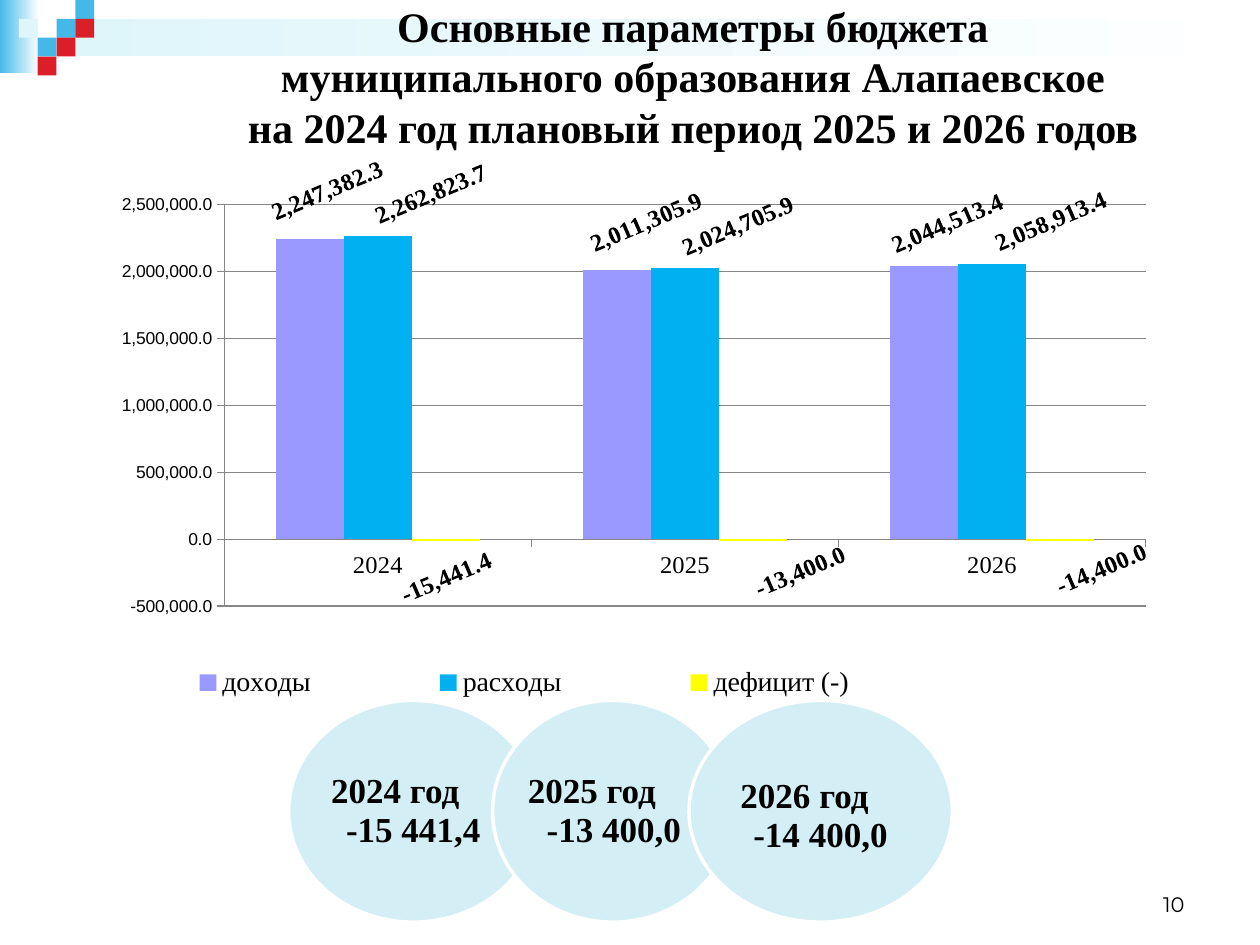
from lxml.etree import SubElement
from pptx import Presentation
from pptx.chart.data import CategoryChartData
from pptx.dml.color import RGBColor
from pptx.enum.chart import XL_CHART_TYPE, XL_LEGEND_POSITION, XL_TICK_MARK
from pptx.enum.shapes import MSO_SHAPE
from pptx.enum.text import MSO_ANCHOR, PP_ALIGN
from pptx.oxml import parse_xml
from pptx.oxml.ns import nsdecls, qn
from pptx.util import Cm, Pt

SERIF = "Times New Roman"
TITLE = ["Основные параметры бюджета",
         "муниципального образования Алапаевское",
         "на 2024 год плановый период 2025 и 2026 годов"]
YEARS = ["2024", "2025", "2026"]
SERIES = [
    ("доходы", "9999FF", (2247382.3, 2011305.9, 2044513.4),
     [(0.015, -0.015), (0.025, -0.015), (0.02, -0.005)]),
    ("расходы", "00B0F0", (2262823.7, 2024705.9, 2058913.4),
     [(0.045, -0.005), (0.045, -0.005), (0.05, -0.005)]),
    ("дефицит (-)", "FFFF00", (-15441.4, -13400, -14400),
     [(0, 0), (0.04, -0.01), (0.035, -0.015)]),
]
OVALS = [
    ("2024 год", "-15 441,4", 5.82, 5.03, 0.12, 0.3, 0),
    ("2025 год", "-13 400,0", 9.93, 4.85, 0, 0.38, 0),
    ("2026 год", "-14 400,0", 13.89, 5.31, 0.26, 0.26, 0.2),
]
BANDS = [(0, 0, 0.79, 1.47, "44B9E8"), (1.14, 0.38, 24.26, 0.76, "DEF5FA")]
CELL = 0.38
TILES = [(3, 1, "44B9E8"), (4, 0, "44B9E8"), (4, 1, "DA1F28"), (2, 2, "44B9E8"),
         (1, 1, "DEF5FA"), (3, 2, "DA1F28"), (2, 3, "DA1F28")]
LEADER = (
    f'<c:extLst {nsdecls("c")}><c:ext uri="{{CE6537A1-D6FC-4f65-9D91-7224C49458BB}}" '
    'xmlns:c15="http://schemas.microsoft.com/office/drawing/2012/chart">'
    '<c15:showLeaderLines val="0"/></c:ext></c:extLst>')


def color(code):
    return RGBColor.from_string(code)


def style(font, size, name=SERIF, bold=False, tint="000000"):
    font.size, font.name, font.bold = Pt(size), name, bold
    font.color.rgb = color(tint)


def write(frame, lines, size, align=PP_ALIGN.CENTER, anchor=MSO_ANCHOR.MIDDLE,
          name=SERIF, bold=True, space=1.0, pad=(0, 0, 0, 0)):
    frame.word_wrap = True
    frame.vertical_anchor = anchor
    (frame.margin_left, frame.margin_top,
     frame.margin_right, frame.margin_bottom) = map(Cm, pad)
    for i, line in enumerate(lines):
        para = frame.paragraphs[0] if i == 0 else frame.add_paragraph()
        para.alignment, para.line_spacing = align, space
        run = para.add_run()
        run.text = line
        style(run.font, size, name, bold)


def shape(slide, kind, box, tint, fade=False):
    item = slide.shapes.add_shape(kind, *map(Cm, box))
    item.shadow.inherit = False
    item.line.fill.background()
    if fade:
        item.fill.gradient()
        item.fill.gradient_angle = 0
        for stop, code in zip(item.fill.gradient_stops, (tint, "FFFFFF")):
            stop.color.rgb = color(code)
    else:
        item.fill.solid()
        item.fill.fore_color.rgb = color(tint)
    return item


def layout(x, y, w=None, h=None, inner=False):
    parts = [("layoutTarget", "inner")] if inner else []
    if w:
        parts += [("xMode", "edge"), ("yMode", "edge")]
    parts += [("x", x), ("y", y)]
    if w:
        parts += [("w", w), ("h", h)]
    root = parse_xml(f"<c:layout {nsdecls('c')}/>")
    manual = SubElement(root, qn("c:manualLayout"))
    for tag, val in parts:
        SubElement(manual, qn("c:" + tag)).set("val", str(val))
    return root


def place(parent, node, after=None):
    for old in parent.findall(qn("c:layout")):
        parent.remove(old)
    if after is None:
        parent.insert(0, node)
    else:
        parent.find(qn(after)).addnext(node)


def draw_chart(slide):
    data = CategoryChartData(number_format="#,##0.0")
    data.categories = YEARS
    for name, _, vals, _ in SERIES:
        data.add_series(name, vals)
    box = map(Cm, (0.89, 3.12, 23.6, 11.61))
    chart = slide.shapes.add_chart(XL_CHART_TYPE.COLUMN_CLUSTERED, *box, data).chart
    style(chart.font, 10, "Arial")
    chart.has_title = False
    chart.has_legend = True
    chart.legend.position = XL_LEGEND_POSITION.BOTTOM
    chart.legend.include_in_layout = False
    style(chart.legend.font, 16)
    place(chart.legend._element, layout(0.03, 0.87, 0.76, 0.09), "c:legendPos")

    cats, vals = chart.category_axis, chart.value_axis
    style(cats.tick_labels.font, 14)
    style(vals.tick_labels.font, 10, "Arial")
    vals.tick_labels.number_format = "#,##0.0"
    vals.tick_labels.number_format_is_linked = False
    vals.minimum_scale, vals.maximum_scale = -500000, 2500000
    vals.major_unit = 500000
    vals.has_major_gridlines = True
    for line in (cats.format.line, vals.format.line, vals.major_gridlines.format.line):
        line.color.rgb = color("868686")
        line.width = Pt(0.75)
    for axis in (cats, vals):
        axis.major_tick_mark = XL_TICK_MARK.OUTSIDE

    plot = chart.plots[0]
    plot.gap_width, plot.overlap, plot.vary_by_categories = 150, 0, False
    place(plot._element.getparent(), layout(0.154, 0.07, 0.787, 0.71, True))
    for bars, (_, tint, _, shifts) in zip(plot.series, SERIES):
        bars.invert_if_negative = False
        bars.format.fill.solid()
        bars.format.fill.fore_color.rgb = color(tint)
        for i in range(len(shifts)):
            style(bars.points[i].data_label.font, 14, bold=True)
        for label, shift in zip(bars._element.xpath(".//c:dLbl"), shifts):
            label.xpath(".//a:bodyPr")[0].set("rot", "-1380000")
            if any(shift):
                place(label, layout(*shift), "c:idx")
        for flag in bars._element.xpath(".//c:showLeaderLines"):
            flag.set("val", "0")
        bars._element.xpath("./c:dLbls")[0].append(parse_xml(LEADER))


def main():
    deck = Presentation()
    deck.slide_width, deck.slide_height = Cm(25.4), Cm(19.05)
    slide = deck.slides.add_slide(deck.slide_layouts[5])
    for *box, tint in BANDS:
        shape(slide, MSO_SHAPE.RECTANGLE, box, tint, fade=True)
    for col, row, tint in TILES:
        shape(slide, MSO_SHAPE.RECTANGLE, (col * CELL, row * CELL, CELL, CELL), tint)

    title = slide.shapes.title
    title._element.getparent().append(title._element)
    title.left, title.top, title.width, title.height = map(Cm, (2.54, 0.07, 22.86, 2.92))
    write(title.text_frame, TITLE, 24)
    draw_chart(slide)

    for year, total, left, width, pad, step, drop in OVALS:
        oval = shape(slide, MSO_SHAPE.OVAL, (left, 14.12, width, 4.47), "D3EEF5")
        oval.line.color.rgb = color("FFFFFF")
        oval.line.width = Pt(2)
        write(oval.text_frame, [year, total], 20, align=PP_ALIGN.LEFT,
              space=0.92, pad=(pad, drop, 0, 0))
        props = oval.text_frame.paragraphs[1]._p.get_or_add_pPr()
        props.set("marL", str(Cm(step)))

    number = slide.shapes.add_textbox(*map(Cm, (18.21, 17.35, 5.92, 1.27)))
    write(number.text_frame, ["10"], 12, align=PP_ALIGN.RIGHT, anchor=MSO_ANCHOR.BOTTOM,
          name="Montserrat", bold=False, pad=(0.25, 0.13, 0.25, 0.13))
    deck.save("out.pptx")


if __name__ == "__main__":
    main()
